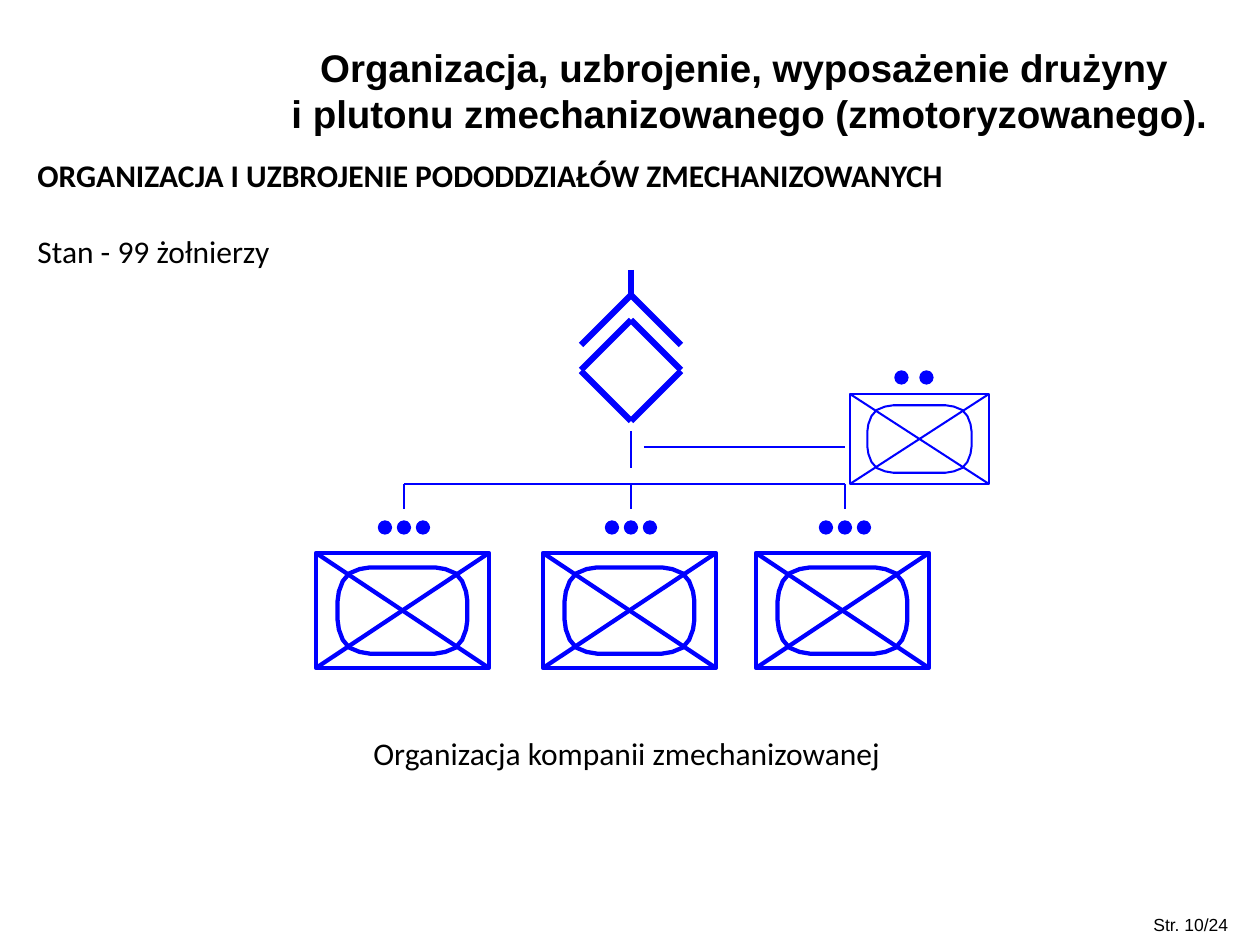
from dataclasses import dataclass

import pptx
import pptx.dml.color
import pptx.enum.shapes
import pptx.enum.text
import pptx.oxml.ns
import pptx.util
from lxml import etree

PX = 914400 / 126
BLUE = pptx.dml.color.RGBColor(0x00, 0x00, 0xFF)
BLACK = pptx.dml.color.RGBColor(0x00, 0x00, 0x00)
SHAPE = pptx.enum.shapes.MSO_SHAPE
THIN, HEAVY = 0.75, 3.5

# Rounded corner of the armour sign, as offsets from its centre in box sizes.
CORNER = [(0.25, 0.5), (0.33, 0.48), (0.41, 0.43), (0.46, 0.34), (0.49, 0.22), (0.5, 0.11)]

AXIS = 631  # x of the company sign and of the middle platoon
BRANCH_Y = 484
DOT = 13


@dataclass(frozen=True)
class Unit:
    """A mechanised infantry sign with its row of size dots."""
    left: int
    top: int
    width: int
    height: int
    weight: float
    dots: int
    dots_centre: int
    dots_top: int
    dots_pitch: int


PLATOONS = [
    Unit(left, 553, 173, 115, 2.45, 3, stem, 521, 19)
    for left, stem in ((316, 404), (543, AXIS), (756, 845))
]
COMMAND = Unit(850, 394, 139, 90, 1.15, 2, 914, 371, 25)


def emu(px: float) -> pptx.util.Emu:
    return pptx.util.Emu(round(px * PX))


def box(left: float, top: float, width: float, height: float) -> list[pptx.util.Emu]:
    return [emu(length) for length in (left, top, width, height)]


def draw_line(slide, x1: int, y1: int, x2: int, y2: int, weight: float) -> None:
    line = slide.shapes.add_connector(
        pptx.enum.shapes.MSO_CONNECTOR.STRAIGHT, emu(x1), emu(y1), emu(x2), emu(y2))
    line.line.color.rgb = BLUE
    line.line.width = pptx.util.Pt(weight)
    properties = line._element.spPr
    etree.SubElement(properties, pptx.oxml.ns.qn("a:effectLst"))


def outline(shape, weight: float, filled: bool = False) -> None:
    shape.shadow.inherit = False
    if filled:
        shape.fill.solid()
        shape.fill.fore_color.rgb = BLUE
    else:
        shape.fill.background()
    shape.line.color.rgb = BLUE
    shape.line.width = pptx.util.Pt(weight)


def draw_armour(slide, unit: Unit) -> None:
    """Draw the rounded track outline, three quarters the size of the unit's frame."""
    width, height = unit.width * 0.75, unit.height * 0.75
    centre_x, centre_y = unit.left + unit.width / 2, unit.top + unit.height / 2
    right = CORNER + [(x, -y) for x, y in reversed(CORNER)]
    ring = right + [(-x, -y) for x, y in right]
    points = [(emu(centre_x + x * width), emu(centre_y + y * height)) for x, y in ring]
    track = slide.shapes.build_freeform(*points[0])
    track.add_line_segments(points[1:], close=True)
    outline(track.convert_to_shape(), unit.weight)


def draw_unit(slide, unit: Unit) -> None:
    right, bottom = unit.left + unit.width, unit.top + unit.height
    frame = slide.shapes.add_shape(
        SHAPE.RECTANGLE, *box(unit.left, unit.top, unit.width, unit.height))
    outline(frame, unit.weight)
    draw_line(slide, unit.left, unit.top, right, bottom, unit.weight)
    draw_line(slide, right, unit.top, unit.left, bottom, unit.weight)
    draw_armour(slide, unit)
    first = unit.dots_centre - (unit.dots - 1) * unit.dots_pitch / 2 - DOT / 2
    for index in range(unit.dots):
        dot = slide.shapes.add_shape(
            SHAPE.OVAL, *box(first + index * unit.dots_pitch, unit.dots_top, DOT, DOT))
        outline(dot, THIN, filled=True)


def draw_company_sign(slide) -> None:
    arm = 50
    for side in (-arm, arm):
        for apex, end in ((295, 345), (320, 370), (421, 371)):
            draw_line(slide, AXIS, apex, AXIS + side, end, HEAVY)
    draw_line(slide, AXIS, 270, AXIS, 295, HEAVY)


def draw_branches(slide) -> None:
    stems = [platoon.dots_centre for platoon in PLATOONS]
    for stem in stems:
        draw_line(slide, stem, BRANCH_Y, stem, 509, THIN)
    draw_line(slide, stems[0], BRANCH_Y, stems[-1], BRANCH_Y, THIN)
    draw_line(slide, 644, 447, 845, 447, THIN)
    draw_line(slide, AXIS, 431, AXIS, 468, THIN)


def set_font(paragraph, name: str, size: int, bold: bool = False) -> None:
    paragraph.font.name = name
    paragraph.font.size = pptx.util.Pt(size)
    paragraph.font.bold = bold
    paragraph.font.color.rgb = BLACK


def add_text(slide, area: list[pptx.util.Emu], text: str, name: str, size: int,
             bold: bool = False, wrap: bool = False):
    frame = slide.shapes.add_textbox(*area).text_frame
    frame.word_wrap = wrap
    frame.text = text
    set_font(frame.paragraphs[0], name, size, bold)
    return frame


def set_title(slide, text: str) -> None:
    title = slide.shapes.title
    title.left, title.top, title.width, title.height = box(255, 37, 989, 106)
    frame = title.text_frame
    frame.auto_size = pptx.enum.text.MSO_AUTO_SIZE.NONE
    frame.vertical_anchor = pptx.enum.text.MSO_ANCHOR.MIDDLE
    frame.text = text
    heading = frame.paragraphs[0]
    heading.alignment = pptx.enum.text.PP_ALIGN.CENTER
    set_font(heading, "Arial", 22, bold=True)


def main() -> None:
    deck = pptx.Presentation()
    deck.slide_width, deck.slide_height = emu(1260), emu(945)
    slide = deck.slides.add_slide(deck.slide_layouts[5])

    set_title(slide, "Organizacja, uzbrojenie, wyposażenie drużyny \v"
                     "i plutonu zmechanizowanego (zmotoryzowanego).")
    for unit in [*PLATOONS, COMMAND]:
        draw_unit(slide, unit)
    draw_branches(slide)
    draw_company_sign(slide)

    intro = add_text(slide, box(25, 150, 1201, 127),
                     "ORGANIZACJA I UZBROJENIE PODODDZIAŁÓW ZMECHANIZOWANYCH",
                     "Calibri", 18, bold=True, wrap=True)
    strength = intro.add_paragraph()
    strength.text = "Stan - 99 żołnierzy"
    strength.space_before = pptx.util.Pt(22)
    set_font(strength, "Calibri", 18)

    add_text(slide, box(361, 728, 538, 50),
             "Organizacja kompanii zmechanizowanej", "Calibri", 18)
    add_text(slide, box(1141, 908, 104, 34), "Str. 10/24", "Arial", 10)
    deck.save("out.pptx")


if __name__ == "__main__":
    main()
